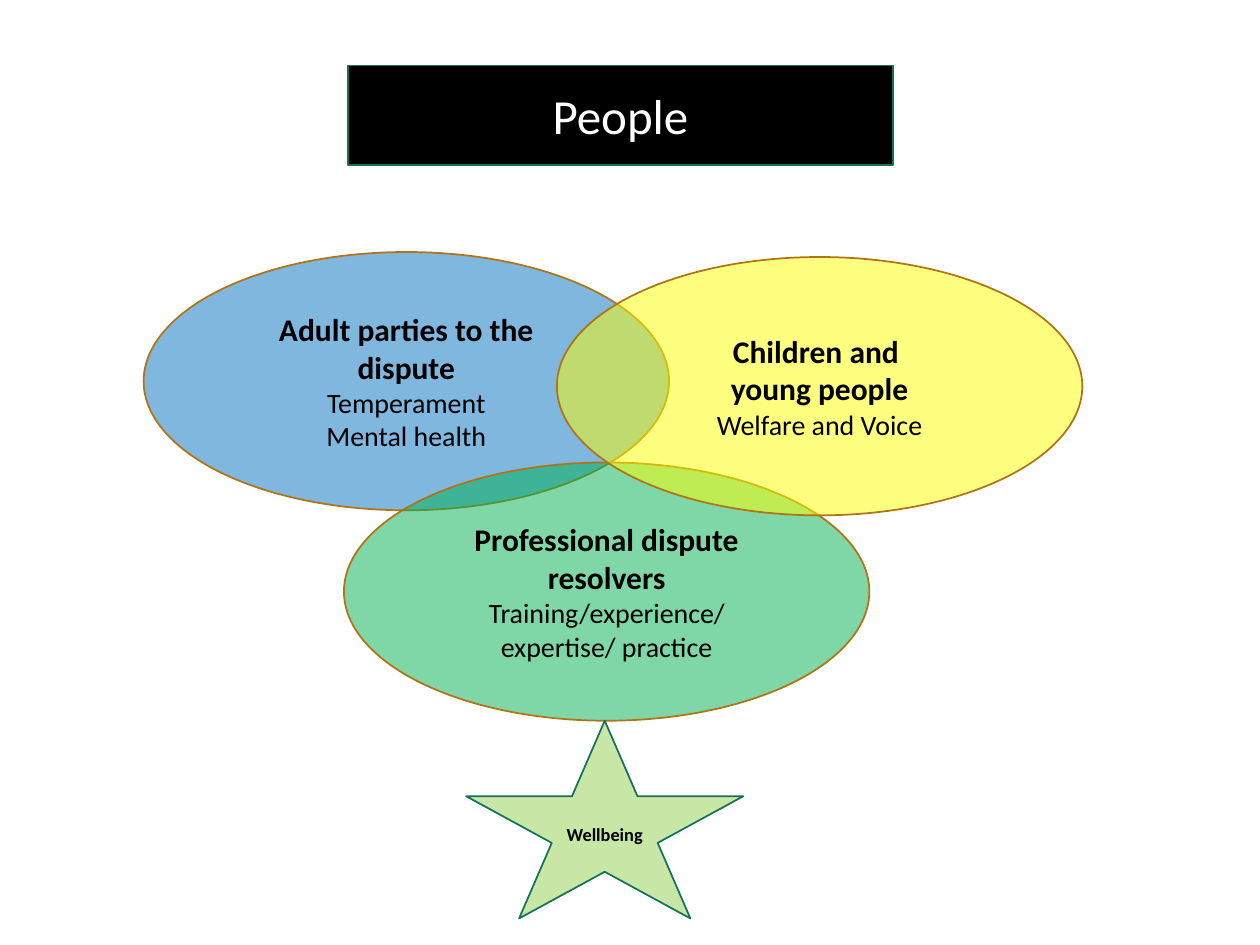
from dataclasses import dataclass

from lxml import etree
from pptx import Presentation
from pptx.dml.color import RGBColor
from pptx.enum.shapes import MSO_SHAPE
from pptx.enum.text import MSO_ANCHOR, PP_ALIGN
from pptx.oxml.ns import qn
from pptx.util import Inches, Pt

RECT, OVAL, STAR = MSO_SHAPE.RECTANGLE, MSO_SHAPE.OVAL, MSO_SHAPE.STAR_5_POINT
CENTER = PP_ALIGN.CENTER
MIDDLE = MSO_ANCHOR.MIDDLE


@dataclass(frozen=True)
class Theme:
    """Colours, font and type sizes of the slide."""
    font: str = "Calibri"
    black: str = "000000"
    white: str = "FFFFFF"
    blue: str = "0070C0"
    green: str = "00B050"
    yellow: str = "FFFF00"
    lime: str = "92D050"
    teal_line: str = "157259"
    ochre_line: str = "B27412"
    title: float = 28
    heading: float = 18
    body: float = 16
    small: float = 10.5


THEME = Theme()


def add_text(tf, text, size=THEME.body, color=THEME.black, bold=False):
    """Append one centred paragraph, using the empty first one if it is free."""
    p = tf.add_paragraph() if tf.text else tf.paragraphs[0]
    p.alignment = CENTER
    r = p.add_run()
    r.text = text
    r.font.name = THEME.font
    r.font.size = Pt(size)
    r.font.bold = bold
    r.font.color.rgb = RGBColor.from_string(color)


def add_figure(slide, kind, box, fill, line, opacity=100):
    """Add a filled, outlined shape and return its text frame."""
    sp = slide.shapes.add_shape(kind, *map(Inches, box))
    sp.shadow.inherit = False
    sp.fill.solid()
    sp.fill.fore_color.rgb = RGBColor.from_string(fill)
    if opacity < 100:
        clr = sp.fill._xPr.find(qn("a:solidFill")).find(qn("a:srgbClr"))
        etree.SubElement(clr, qn("a:alpha")).set("val", str(opacity * 1000))
    sp.line.color.rgb = RGBColor.from_string(line)
    sp.line.width = Pt(1)
    tf = sp.text_frame
    tf.word_wrap = True
    tf.vertical_anchor = MIDDLE
    return tf


def add_group(slide, left, top, fill, headings, details):
    """Add one translucent ellipse with bold headings above plain details."""
    tf = add_figure(slide, OVAL, (left, top, 4.17, 2.05), fill,
                    THEME.ochre_line, opacity=50)
    for text in headings:
        add_text(tf, text, size=THEME.heading, bold=True)
    for text in details:
        add_text(tf, text)


def main():
    """Build the slide and save it."""
    prs = Presentation()
    prs.slide_width, prs.slide_height = Inches(10), Inches(7.5)
    slide = prs.slides.add_slide(prs.slide_layouts[6])

    tf = add_figure(slide, RECT, (2.76, 0.52, 4.33, 0.79), THEME.black, THEME.teal_line)
    add_text(tf, "People", size=THEME.title, color=THEME.white)

    add_group(slide, 1.14, 2, THEME.blue,
              ["Adult parties to the dispute"], ["Temperament", "Mental health"])
    add_group(slide, 2.73, 3.67, THEME.green,
              ["Professional dispute resolvers"],
              ["Training/experience/expertise/ practice"])
    add_group(slide, 4.42, 2.04, THEME.yellow,
              ["Children and ", "young people"], ["Welfare and Voice"])

    tf = add_figure(slide, STAR, (3.7, 5.72, 2.2, 1.57), THEME.lime,
                    THEME.teal_line, opacity=50)
    add_text(tf, "Wellbeing", size=THEME.small, bold=True)

    prs.save("out.pptx")


if __name__ == "__main__":
    main()
